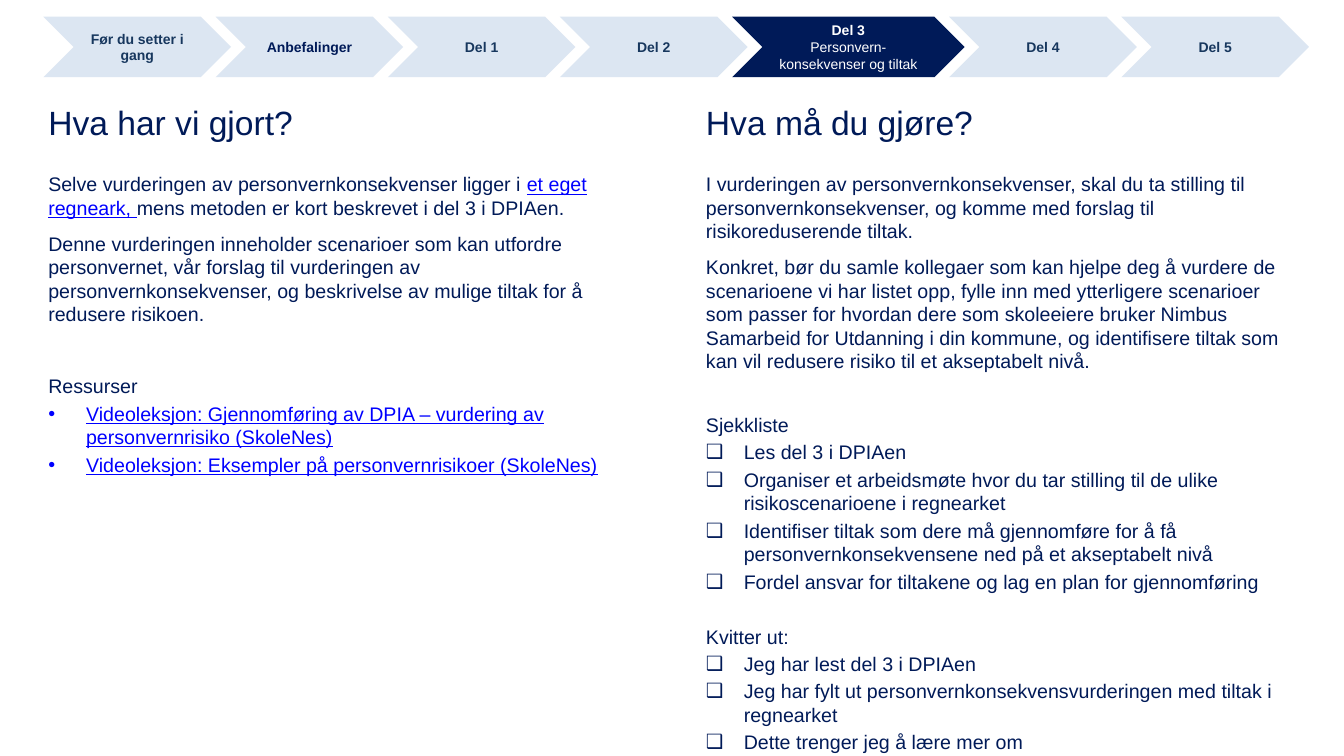
"""Build the slide on part 3: privacy consequences and measures."""
from dataclasses import dataclass

from lxml.etree import SubElement
from pptx import Presentation
from pptx.dml.color import RGBColor
from pptx.enum.shapes import MSO_SHAPE as Preset
from pptx.enum.text import MSO_ANCHOR as Anchor, PP_ALIGN as Align
from pptx.oxml.ns import qn
from pptx.slide import Slide
from pptx.text.text import TextFrame, _Paragraph as Paragraph
from pptx.util import Pt

NAVY = RGBColor(0x00, 0x1A, 0x58)
STEEL = RGBColor(0x17, 0x37, 0x5E)
PALE = RGBColor(0xDC, 0xE6, 0xF2)
LINK = RGBColor(0x00, 0x00, 0xFF)
WHITE = RGBColor(0xFF, 0xFF, 0xFF)

FONT = "Arial"
DOT, BOX = "•", "❑"
LINE_GAP = 2.8
SECTION_GAP = 22.4
INDENT = 27
COLUMN_WIDTH = 435
STEP_LEFT, STEP_TOP, STEP_HEIGHT, STEP_OVERLAP = 31, 12, 43.2, 11


@dataclass(frozen=True)
class Step:
    label: str
    detail: str = ""
    width: float = 134
    fill: RGBColor = PALE
    color: RGBColor = STEEL


@dataclass(frozen=True)
class Run:
    text: str
    linked: bool = False


@dataclass(frozen=True)
class Entry:
    runs: tuple[Run, ...]
    before: float = LINE_GAP
    after: float = 0
    bullet: str = ""
    color: RGBColor = NAVY


@dataclass(frozen=True)
class Column:
    left: float
    title: str
    height: float
    entries: tuple[Entry, ...]


def body(*runs: Run, after: float = 6) -> Entry:
    """Return a running-text paragraph."""
    return Entry(runs, after=after)


def heading(text: str, before: float = SECTION_GAP) -> Entry:
    """Return a heading set apart from the text above."""
    return Entry((Run(text),), before=before)


def check(text: str) -> Entry:
    """Return a checklist item."""
    return Entry((Run(text),), bullet=BOX)


def video(text: str) -> Entry:
    """Return a bulleted item styled as a link."""
    return Entry((Run(text, True),), bullet=DOT, color=LINK)


STEPS = (
    Step("Før du setter i gang"),
    Step("Anbefalinger", color=NAVY),
    Step("Del 1"),
    Step("Del 2"),
    Step("Del 3", "Personvern-konsekvenser og tiltak", 166, NAVY, WHITE),
    Step("Del 4"),
    Step("Del 5"),
)

COLUMNS = (
    Column(27.4, "Hva har vi gjort?", 389.5, (
        body(
            Run("Selve vurderingen av personvernkonsekvenser ligger i "),
            Run("et eget regneark, ", True),
            Run("mens metoden er kort beskrevet i del 3 i DPIAen."),
        ),
        body(Run(
            "Denne vurderingen inneholder scenarioer som kan utfordre personvernet, "
            "vår forslag til vurderingen av personvernkonsekvenser, og beskrivelse "
            "av mulige tiltak for å redusere risikoen."
        )),
        heading("Ressurser", SECTION_GAP + 6),
        video("Videoleksjon: Gjennomføring av DPIA – vurdering av personvernrisiko (SkoleNes)"),
        video("Videoleksjon: Eksempler på personvernrisikoer (SkoleNes)"),
    )),
    Column(497.2, "Hva må du gjøre?", 420.5, (
        body(Run(
            "I vurderingen av personvernkonsekvenser, skal du ta stilling til "
            "personvernkonsekvenser, og komme med forslag til risikoreduserende tiltak."
        )),
        body(Run(
            "Konkret, bør du samle kollegaer som kan hjelpe deg å vurdere de "
            "scenarioene vi har listet opp, fylle inn med ytterligere scenarioer som "
            "passer for hvordan dere som skoleeiere bruker Nimbus Samarbeid for "
            "Utdanning i din kommune, og identifisere tiltak som kan vil redusere "
            "risiko til et akseptabelt nivå."
        )),
        heading("Sjekkliste"),
        check("Les del 3 i DPIAen"),
        check("Organiser et arbeidsmøte hvor du tar stilling til de ulike "
              "risikoscenarioene i regnearket"),
        check("Identifiser tiltak som dere må gjennomføre for å få "
              "personvernkonsekvensene ned på et akseptabelt nivå"),
        check("Fordel ansvar for tiltakene og lag en plan for gjennomføring"),
        heading("Kvitter ut:"),
        check("Jeg har lest del 3 i DPIAen"),
        check("Jeg har fylt ut personvernkonsekvensvurderingen med tiltak i regnearket"),
        check("Dette trenger jeg å lære mer om"),
    )),
)


def set_font(paragraph: Paragraph, size: float, color: RGBColor, bold: bool = False) -> None:
    """Set the font of a whole paragraph."""
    font = paragraph.font
    font.name, font.size, font.bold = FONT, Pt(size), bold
    font.color.rgb = color


def add_bullet(paragraph: Paragraph, character: str) -> None:
    """Give a paragraph a hanging bullet."""
    properties = paragraph._p.get_or_add_pPr()
    properties.set("marL", str(Pt(INDENT)))
    properties.set("indent", str(-Pt(INDENT)))
    SubElement(properties, qn("a:buFont")).set("typeface", FONT)
    SubElement(properties, qn("a:buChar")).set("char", character)


def next_paragraph(frame: TextFrame, index: int) -> Paragraph:
    """Return the first paragraph of a frame, or a new one."""
    return frame.add_paragraph() if index else frame.paragraphs[0]


def add_text_frame(slide: Slide, left: float, top: float, height: float) -> TextFrame:
    """Add a wrapping text box as wide as a column."""
    shape = slide.shapes.add_textbox(Pt(left), Pt(top), Pt(COLUMN_WIDTH), Pt(height))
    shape.text_frame.word_wrap = True
    return shape.text_frame


def draw_column(slide: Slide, column: Column) -> None:
    """Draw a column's title and text."""
    title = add_text_frame(slide, column.left, 65.5, 43.2)
    title.vertical_anchor = Anchor.MIDDLE
    title.text = column.title
    set_font(title.paragraphs[0], 24, NAVY)

    frame = add_text_frame(slide, column.left, 119.5, column.height)
    for index, entry in enumerate(column.entries):
        paragraph = next_paragraph(frame, index)
        if entry.bullet:
            add_bullet(paragraph, entry.bullet)
        paragraph.space_before = Pt(entry.before if index else 0)
        paragraph.space_after = Pt(entry.after)
        set_font(paragraph, 14, entry.color)
        for part in entry.runs:
            run = paragraph.add_run()
            run.text = part.text
            if part.linked:
                run.font.underline = True
                run.font.color.rgb = LINK


def draw_step(slide: Slide, step: Step, left: float) -> None:
    """Draw one chevron of the progress bar."""
    shape = slide.shapes.add_shape(
        Preset.CHEVRON, Pt(left), Pt(STEP_TOP), Pt(step.width), Pt(STEP_HEIGHT))
    shape.shadow.inherit = False
    shape.fill.solid()
    shape.fill.fore_color.rgb = step.fill
    shape.line.fill.background()
    frame = shape.text_frame
    frame.word_wrap = True
    frame.vertical_anchor = Anchor.MIDDLE
    for index, text in enumerate(filter(None, (step.label, step.detail))):
        paragraph = next_paragraph(frame, index)
        paragraph.text = text
        paragraph.alignment = Align.CENTER
        set_font(paragraph, 10, step.color, bold=index == 0)


def main() -> None:
    """Build and save the presentation."""
    presentation = Presentation()
    presentation.slide_width, presentation.slide_height = Pt(960), Pt(540)
    slide = presentation.slides.add_slide(presentation.slide_layouts[6])
    for column in COLUMNS:
        draw_column(slide, column)
    left = STEP_LEFT
    for step in STEPS:
        draw_step(slide, step, left)
        left += step.width - STEP_OVERLAP
    presentation.save("out.pptx")


if __name__ == "__main__":
    main()
